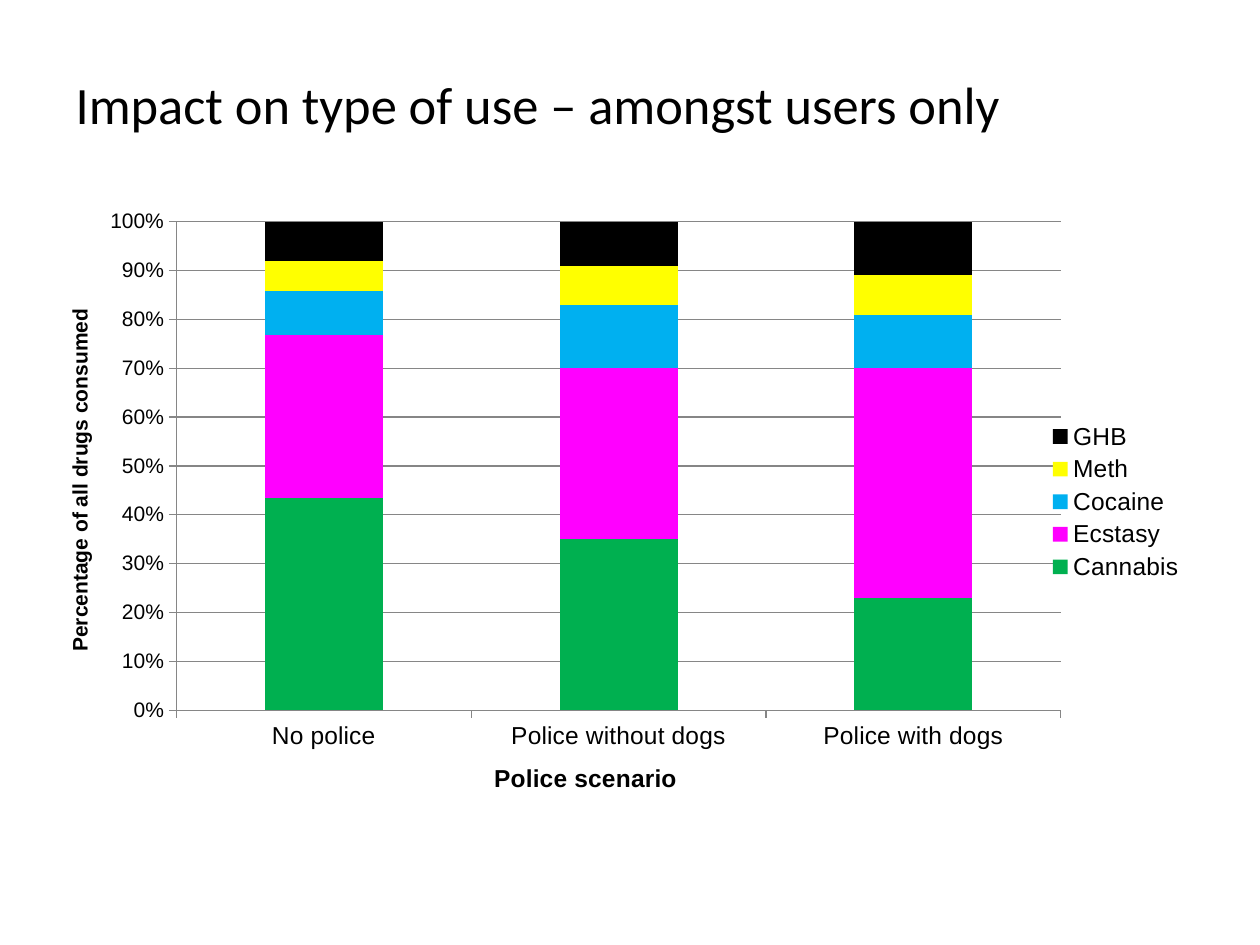
from lxml.etree import SubElement
from pptx import Presentation
from pptx.chart.data import CategoryChartData
from pptx.dml.color import RGBColor
from pptx.enum.chart import XL_CHART_TYPE as ChartType
from pptx.enum.chart import XL_LEGEND_POSITION as LegendPosition
from pptx.enum.chart import XL_TICK_MARK as TickMark
from pptx.enum.text import MSO_ANCHOR as Anchor
from pptx.enum.text import PP_ALIGN as Align
from pptx.oxml.ns import qn
from pptx.util import Pt

COLORS = {
    "text": "000000",
    "line": "868686",
    "Cannabis": "00B050",
    "Ecstasy": "FF00FF",
    "Cocaine": "00B0F0",
    "Meth": "FFFF00",
    "GHB": "000000",
}
SCENARIOS = ["No police", "Police without dogs", "Police with dogs"]
DRUG_SHARES = {
    "Cannabis": [43, 35, 23],
    "Ecstasy": [33, 35, 47],
    "Cocaine": [9, 13, 11],
    "Meth": [6, 8, 8],
    "GHB": [8, 9, 11],
}


class SlideBuilder:
    """Holds the style and the current slide."""

    title_font = "Calibri"
    chart_font = "Arial"

    def __init__(self, slide):
        self.slide = slide

    def style_font(self, font, name, size, bold=False):
        font.name, font.size, font.bold = name, Pt(size), bold
        font.color.rgb = RGBColor.from_string(COLORS["text"])

    def add_title(self, text, left, top, width, height):
        title = self.slide.shapes.title
        title.left, title.top = Pt(left), Pt(top)
        title.width, title.height = Pt(width), Pt(height)
        frame = title.text_frame
        frame.word_wrap = True
        frame.vertical_anchor = Anchor.TOP
        paragraph = frame.paragraphs[0]
        paragraph.alignment = Align.LEFT
        run = paragraph.add_run()
        run.text = text
        self.style_font(run.font, self.title_font, 30)

    def add_stacked_chart(self, categories, series, left, top, width, height):
        data = CategoryChartData()
        data.categories = categories
        for name, values in series.items():
            data.add_series(name, values)
        chart = self.slide.shapes.add_chart(
            ChartType.COLUMN_STACKED_100,
            Pt(left), Pt(top), Pt(width), Pt(height), data).chart
        self.style_font(chart.font, self.chart_font, 12)
        chart.has_title = False
        plot = chart.plots[0]
        plot.gap_width, plot.overlap = 150, 100
        plot.vary_by_categories = False
        for bar_series in plot.series:
            fill = bar_series.format.fill
            fill.solid()
            fill.fore_color.rgb = RGBColor.from_string(COLORS[bar_series.name])
        chart.has_legend = True
        chart.legend.position = LegendPosition.RIGHT
        chart.legend.include_in_layout = False
        self.style_font(chart.legend.font, self.chart_font, 14)
        return chart

    def format_axis(self, axis, title, size):
        axis.major_tick_mark = TickMark.OUTSIDE
        axis.minor_tick_mark = TickMark.NONE
        self.style_font(axis.tick_labels.font, self.chart_font, size)
        self.format_line(axis.format.line)
        run = axis.axis_title.text_frame.paragraphs[0].add_run()
        run.text = title
        self.style_font(run.font, self.chart_font, size, bold=True)

    def format_line(self, line):
        line.width = Pt(0.75)
        line.color.rgb = RGBColor.from_string(COLORS["line"])

    def place_plot(self, chart, x, y, w, h):
        """Fix the inner plot area, in fractions of the chart."""
        plot_area = chart.plots[0]._element.getparent()
        layout = plot_area.find(qn("c:layout"))
        if layout is None:
            layout = plot_area.makeelement(qn("c:layout"))
            plot_area.insert(0, layout)
        manual = SubElement(layout, qn("c:manualLayout"))
        settings = {"layoutTarget": "inner", "xMode": "edge", "yMode": "edge",
                    "x": x, "y": y, "w": w, "h": h}
        for tag, value in settings.items():
            SubElement(manual, qn(f"c:{tag}")).set("val", str(value))


def main():
    presentation = Presentation()
    presentation.slide_width, presentation.slide_height = Pt(720), Pt(540)
    title_only = presentation.slide_layouts[5]
    builder = SlideBuilder(presentation.slides.add_slide(title_only))

    builder.add_title("Impact on type of use – amongst users only",
                      36, 37.5, 648, 62.5)
    chart = builder.add_stacked_chart(SCENARIOS, DRUG_SHARES,
                                      36, 116.5, 648, 340.5)
    builder.format_axis(chart.category_axis, "Police scenario", 14)

    value_axis = chart.value_axis
    builder.format_axis(value_axis, "Percentage of all drugs consumed", 12)
    value_axis.minimum_scale, value_axis.maximum_scale = 0, 1
    value_axis.major_unit = 0.1
    value_axis.tick_labels.number_format = "0%"
    value_axis.tick_labels.number_format_is_linked = False
    value_axis.has_major_gridlines = True
    builder.format_line(value_axis.major_gridlines.format.line)
    builder.place_plot(chart, 0.1, 0.03, 0.78, 0.82)

    presentation.save("out.pptx")


if __name__ == "__main__":
    main()
